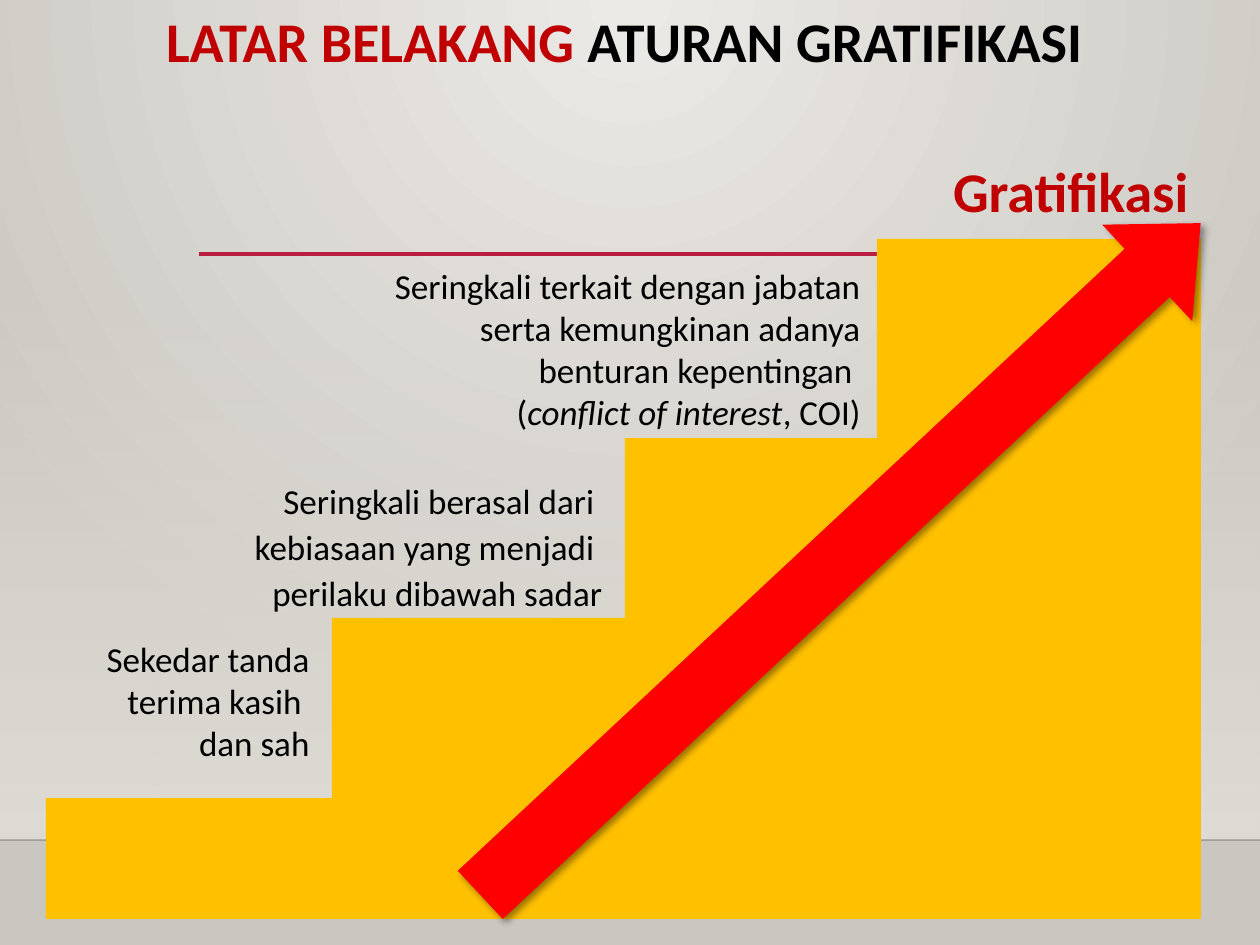
from itertools import pairwise

from lxml.etree import SubElement
from pptx import Presentation
from pptx.dml.color import RGBColor
from pptx.enum.shapes import MSO_CONNECTOR, MSO_SHAPE
from pptx.enum.text import MSO_ANCHOR, MSO_AUTO_SIZE, PP_ALIGN
from pptx.oxml import parse_xml
from pptx.oxml.ns import nsdecls, qn
from pptx.util import Emu, Pt

COLORS = {
    "light": "ECEAE7", "floor": "CAC7C1", "wall": "DFDBD5", "edge": "000001",
    "rule": "B71E42", "accent": "C00000", "text": "000000",
    "stairs": "FFC000", "arrow": "FF0000",
}
SIZE = (1260, 945)


def px(length):
    """Turn whole pixels into EMU."""
    return Emu(round(length * 914400 / 126))


def color(name):
    """Return a palette colour."""
    return RGBColor.from_string(COLORS[name])


def set_gradient(fill, properties, stops, direction):
    """Give a gradient of (position, colour, alpha) stops with a direction element."""
    fill.gradient()
    gradient = properties.find(qn("a:gradFill"))
    stop_xml = "".join(
        f'<a:gs pos="{position * 1000}"><a:srgbClr val="{COLORS[name]}">'
        f'<a:alpha val="{alpha * 1000}"/></a:srgbClr></a:gs>'
        for position, name, alpha in stops
    )
    gradient.getparent().replace(gradient, parse_xml(
        f'<a:gradFill {nsdecls("a")} rotWithShape="1"><a:gsLst>{stop_xml}</a:gsLst>'
        f"{direction}</a:gradFill>"
    ))


def add_block(shapes, kind, box, fill=None):
    """Add a preset shape without outline or shadow."""
    shape = shapes.add_shape(kind, *map(px, box))
    shape.shadow.inherit = False
    shape.line.fill.background()
    if fill:
        shape.fill.solid()
        shape.fill.fore_color.rgb = color(fill)
    return shape


def add_rule(slide, start, end, name, width, alpha=100):
    """Add a straight line."""
    line = slide.shapes.add_connector(MSO_CONNECTOR.STRAIGHT, *map(px, start + end))
    line.line.color.rgb = color(name)
    line.line.width = Pt(width)
    rgb = line._element.spPr.find(".//" + qn("a:srgbClr"))
    SubElement(rgb, qn("a:alpha"), val=str(alpha * 1000))
    SubElement(line._element.spPr, qn("a:effectLst"))


def write_text(shape, paragraphs, box, size=20, bold=False, fill="text",
               align=PP_ALIGN.RIGHT, spacing=1.0):
    """Place a text shape and write paragraphs of (text, overrides) runs."""
    shape.left, shape.top, shape.width, shape.height = map(px, box)
    frame = shape.text_frame
    frame.word_wrap = True
    frame.auto_size = MSO_AUTO_SIZE.NONE
    frame.vertical_anchor = MSO_ANCHOR.TOP
    for index, runs in enumerate(paragraphs):
        paragraph = frame.add_paragraph() if index else frame.paragraphs[0]
        paragraph.alignment = align
        paragraph.line_spacing = spacing
        paragraph.space_before = paragraph.space_after = Pt(0)
        properties = paragraph._p.get_or_add_pPr()
        properties.set("marL", "0")
        properties.set("indent", "0")
        SubElement(properties, qn("a:buNone"))
        for text, overrides in runs:
            run = paragraph.add_run()
            run.text = text
            run.font.name = "Calibri"
            run.font.size = Pt(size)
            run.font.bold = bold
            run.font.italic = overrides.get("italic", False)
            run.font.color.rgb = color(overrides.get("fill", fill))


def add_text(slide, paragraphs, box, **formatting):
    """Add a text box."""
    write_text(slide.shapes.add_textbox(0, 0, 0, 0), paragraphs, box, **formatting)


def add_backdrop(slide):
    """Draw the wall, the floor edge and the rule."""
    fill = slide.background.fill
    set_gradient(fill, slide._element.cSld.bg.bgPr,
                 [(0, "light", 100), (100, "floor", 100)],
                 '<a:path path="circle"><a:fillToRect l="43000" t="0" r="43000" '
                 'b="100000"/></a:path>')
    wall = add_block(slide.shapes, MSO_SHAPE.RECTANGLE, (0, 277, SIZE[0], 563))
    set_gradient(wall.fill, wall._element.spPr,
                 [(0, "wall", 0), (100, "wall", 100)],
                 '<a:lin ang="5400000" scaled="0"/>')
    add_rule(slide, (0, 840), (SIZE[0], 840), "edge", 1, alpha=20)
    add_rule(slide, (199, 254), (1105, 254), "rule", 2.5)


def add_stairs(slide):
    """Draw the steps as a group with a common right edge."""
    group = slide.shapes.add_group_shape()
    right = 1201
    lefts = (877, 625, 332, 46)
    levels = (239, 438, 618, 798, 919)
    for left, (top, bottom) in zip(lefts, pairwise(levels)):
        add_block(group.shapes, MSO_SHAPE.RECTANGLE,
                  (left, top, right - left, bottom - top), "stairs")


def add_arrow(slide):
    """Draw the rising arrow with its soft shadow."""
    arrow = add_block(slide.shapes, MSO_SHAPE.RIGHT_ARROW, (348, 493, 985, 132), "arrow")
    arrow.rotation = 317
    arrow.adjustments[0] = 0.5
    arrow.adjustments[1] = 0.553
    effects = arrow._element.spPr.find(qn("a:effectLst"))
    effects.append(parse_xml(
        f'<a:outerShdw {nsdecls("a")} blurRad="{Pt(4)}" dist="{Pt(3)}" dir="2700000" '
        f'algn="ctr" rotWithShape="0"><a:srgbClr val="{COLORS["text"]}">'
        '<a:alpha val="40000"/></a:srgbClr></a:outerShdw>'
    ))


def main():
    """Build and save the slide."""
    presentation = Presentation()
    presentation.slide_width, presentation.slide_height = map(px, SIZE)
    slide = presentation.slides.add_slide(presentation.slide_layouts[1])
    title, body = slide.placeholders
    add_backdrop(slide)
    for placeholder in (title, body):
        slide.shapes._spTree.append(placeholder._element)
    write_text(title, [[("LATAR BELAKANG ", {"fill": "accent"}),
                        ("ATURAN GRATIFIKASI", {})]],
               (147, 8, 955, 111), size=32, bold=True,
               align=PP_ALIGN.CENTER, spacing=0.9)
    write_text(body, [[("Seringkali berasal dari ", {})],
                      [("kebiasaan yang menjadi ", {})],
                      [("perilaku dibawah sadar", {})]],
               (145, 469, 470, 164), spacing=1.1)
    add_text(slide, [[("Sekedar tanda terima kasih ", {})], [("dan sah", {})]],
             (14, 631, 308, 166))
    add_text(slide, [[("Seringkali terkait dengan jabatan serta kemungkinan "
                       "adanya benturan kepentingan ", {})],
                     [("(", {}), ("conflict of interest", {"italic": True}),
                      (", COI)", {})]],
             (357, 258, 516, 179))
    add_text(slide, [[("Gratifikasi", {})]], (900, 163, 301, 89),
             size=32, bold=True, fill="accent", spacing=0.8)
    add_stairs(slide)
    add_arrow(slide)
    presentation.save("out.pptx")


if __name__ == "__main__":
    main()
